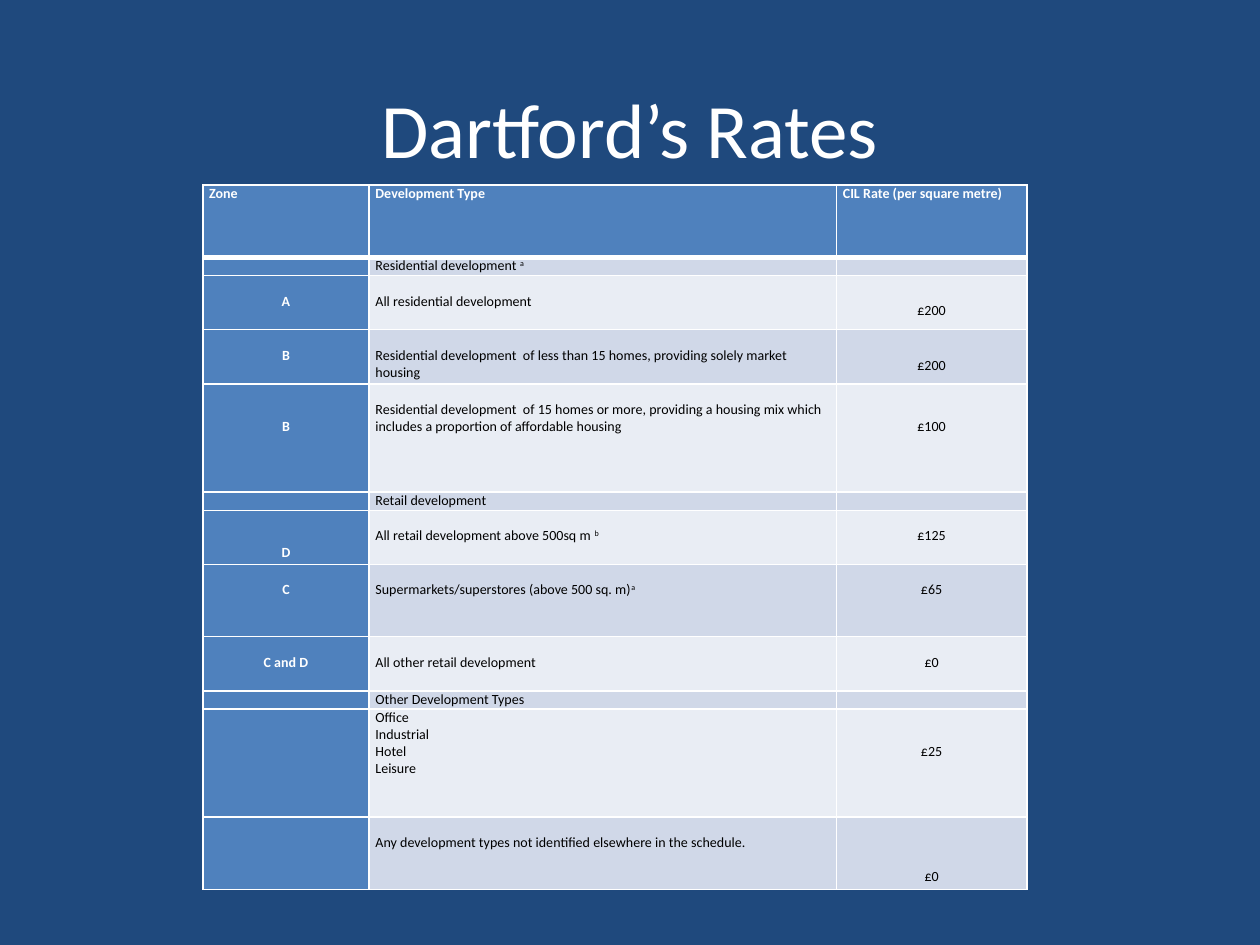
from lxml import etree
from pptx import Presentation
from pptx.dml.color import RGBColor
from pptx.enum.text import MSO_ANCHOR, PP_ALIGN
from pptx.oxml.ns import qn
from pptx.util import Inches, Pt

LEFT, CENTER = PP_ALIGN.LEFT, PP_ALIGN.CENTER
TOP, MIDDLE = MSO_ANCHOR.TOP, MSO_ANCHOR.MIDDLE

NAVY = RGBColor(0x1F, 0x49, 0x7D)
BLUE = RGBColor(0x4F, 0x81, 0xBD)
BAND = RGBColor(0xD0, 0xD8, 0xE8)
PALE = RGBColor(0xE9, 0xED, 0xF4)
WHITE = RGBColor(0xFF, 0xFF, 0xFF)
BLACK = RGBColor(0x00, 0x00, 0x00)

HEADINGS = ("Zone", "Development Type", "CIL Rate (per square metre)")
COLUMN_WIDTHS = (1.32, 3.71, 1.51)
EMPTY = ("", 0)
RATES = (
    (1, EMPTY, ("Residential development ^a", 0), EMPTY),
    (3, ("A", 1), ("All residential development", 1), ("£200", 1, MIDDLE)),
    (3, ("B", 1),
     ("Residential development  of less than 15 homes, providing solely market housing", 1),
     ("£200", 1, MIDDLE)),
    (6, ("B", 2),
     ("Residential development  of 15 homes or more, providing a housing mix which "
      "includes a proportion of affordable housing", 1), ("£100", 2)),
    (1, EMPTY, ("Retail development", 0), EMPTY),
    (3, ("D", 2), ("All retail development above 500sq m ^b", 1), ("£125", 1)),
    (4, ("C", 1), ("Supermarkets/superstores (above 500 sq. m)^a", 1), ("£65", 1)),
    (3, ("C and D", 1), ("All other retail development", 1), ("£0", 1)),
    (1, EMPTY, ("Other Development Types", 0), EMPTY),
    (6, EMPTY, ("Office\nIndustrial\nHotel\nLeisure", 0), ("£25", 2)),
    (4, EMPTY,
     ("Any development types not identified elsewhere in the schedule.", 1), ("£0", 3)),
)


class RatesSlide:
    """Holds the slide and its style, and draws titles and tables on it."""

    font_name = "Calibri"
    title_size = 44
    table_size = 8
    header_lines = 4
    grid_line = 5.59 / 39
    text_line = 8 * 1.22 / 72

    def __init__(self, presentation):
        self.width = presentation.slide_width
        self.height = presentation.slide_height
        self.slide = presentation.slides.add_slide(presentation.slide_layouts[6])
        background = self.slide.background.fill
        background.solid()
        background.fore_color.rgb = NAVY

    def place(self, left, top, width, height):
        return (int(left * self.width), int(top * self.height),
                int(width * self.width), int(height * self.height))

    def add_text(self, paragraph, text, size, color, bold=False, align=LEFT):
        paragraph.alignment = align
        for index, part in enumerate(text.split("^")):
            run = paragraph.add_run()
            run.text = part
            font = run.font
            font.name, font.size, font.bold = self.font_name, Pt(size), bold
            font.color.rgb = color
            if index:
                run._r.get_or_add_rPr().set("baseline", "30000")

    def title(self, text, *share):
        shape = self.slide.shapes.add_textbox(*self.place(*share))
        frame = shape.text_frame
        frame.word_wrap = True
        frame.vertical_anchor = MIDDLE
        self.add_text(frame.paragraphs[0], text, self.title_size, WHITE, align=CENTER)

    def border(self, cell, **widths):
        properties = cell._tc.get_or_add_tcPr()
        for side in ("lnL", "lnR", "lnT", "lnB"):
            line = etree.SubElement(properties, qn(f"a:{side}"), w=str(Pt(widths.get(side, 1))))
            fill = etree.SubElement(line, qn("a:solidFill"))
            etree.SubElement(fill, qn("a:srgbClr"), val=str(WHITE))

    def cell(self, cell, content, fill, color, bold, align, **widths):
        text, skipped, *anchor = content
        self.border(cell, **widths)
        cell.fill.solid()
        cell.fill.fore_color.rgb = fill
        cell.margin_left = cell.margin_right = Inches(0.05)
        cell.margin_top = Inches(skipped * self.text_line)
        cell.margin_bottom = 0
        cell.vertical_anchor = anchor[0] if anchor else TOP
        frame = cell.text_frame
        if not text:
            ending = frame.paragraphs[0]._p.get_or_add_endParaRPr()
            ending.set("sz", str(self.table_size * 100))
            return
        for index, line in enumerate(text.split("\n")):
            paragraph = frame.add_paragraph() if index else frame.paragraphs[0]
            self.add_text(paragraph, line, self.table_size, color, bold, align)

    def table(self, headings, rates, *share):
        shape = self.slide.shapes.add_table(
            len(rates) + 1, len(headings), *self.place(*share))
        table = shape.table
        table.horz_banding = False
        for column, width in zip(table.columns, COLUMN_WIDTHS):
            column.width = Inches(width)
        heights = [self.header_lines] + [rate[0] for rate in rates]
        for row, lines in zip(table.rows, heights):
            row.height = Inches(lines * self.grid_line)
        for column, heading in enumerate(headings):
            self.cell(table.cell(0, column), (heading, 0), BLUE, WHITE, True, LEFT, lnB=3)
        for row, (_, *contents) in enumerate(rates, 1):
            band = BAND if row % 2 else PALE
            styles = ((BLUE, WHITE, True, CENTER), (band, BLACK, False, LEFT),
                      (band, BLACK, False, CENTER))
            for column, (content, style) in enumerate(zip(contents, styles)):
                self.cell(table.cell(row, column), content, *style, lnT=3 if row == 1 else 1)


def main():
    presentation = Presentation()
    presentation.slide_width = Inches(10)
    presentation.slide_height = Inches(7.5)
    slide = RatesSlide(presentation)
    slide.title("Dartford’s Rates", 0.08, 0.07, 0.84, 0.13)
    slide.table(HEADINGS, RATES, 1.61 / 10, 1.47 / 7.5, 6.54 / 10, 5.59 / 7.5)
    presentation.save("out.pptx")


if __name__ == "__main__":
    main()
